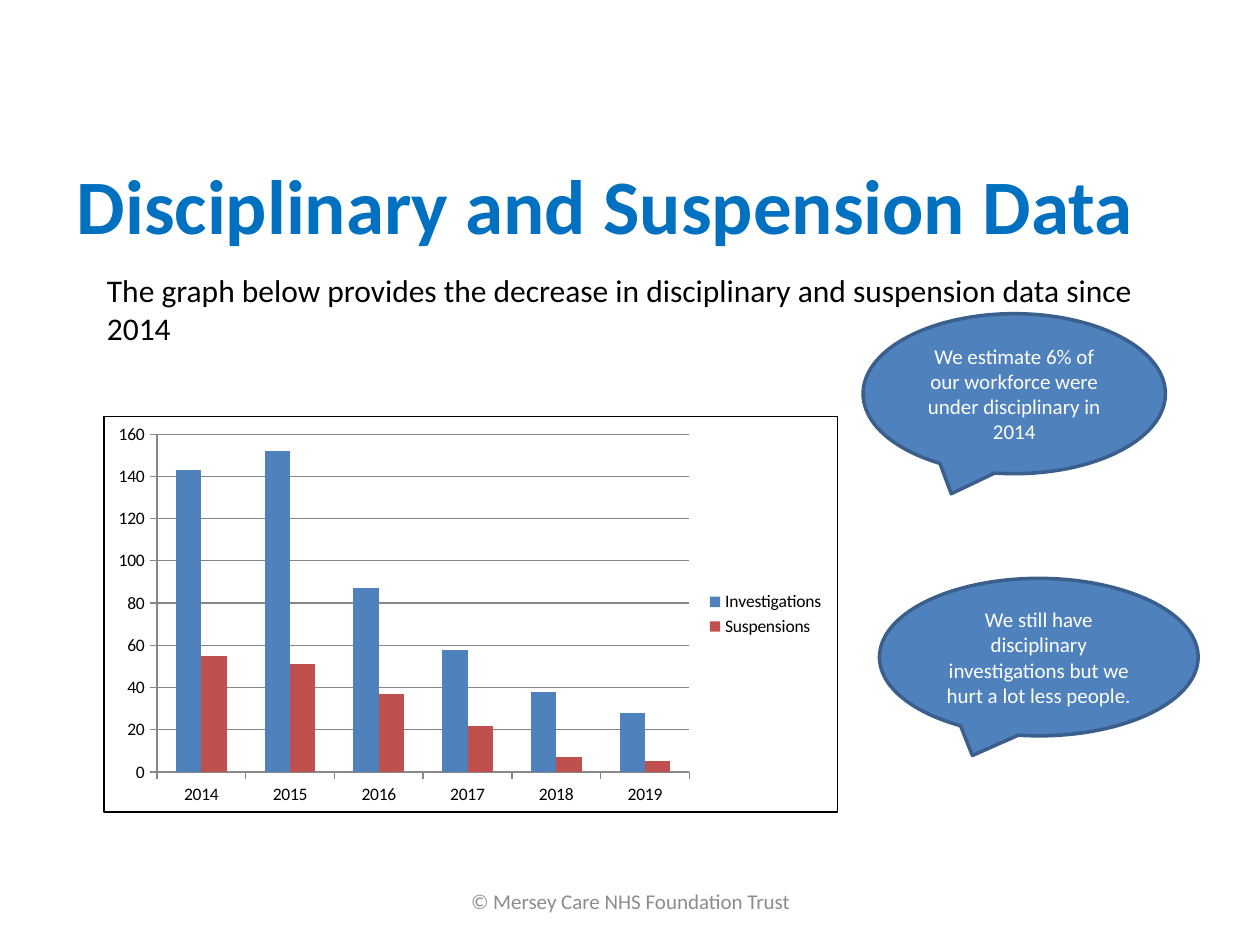
import pptx
import pptx.chart.data
import pptx.dml.color
import pptx.enum.chart
import pptx.enum.shapes
import pptx.enum.text
import pptx.oxml
import pptx.oxml.ns
import pptx.util
from pptx.util import Inches

COLORS = {
    "title": "0070C0", "ink": "000000", "footer": "8C8C8C", "white": "FFFFFF",
    "blue": "4F81BD", "red": "C0504D", "outline": "3A5F8C", "axis": "878787",
}
ALIGN = pptx.enum.text.PP_ALIGN
ANCHOR = pptx.enum.text.MSO_ANCHOR

YEARS = ["2014", "2015", "2016", "2017", "2018", "2019"]
CASES = [
    ("Investigations", [143, 152, 87, 58, 38, 28], "blue"),
    ("Suspensions", [55, 51, 37, 22, 7, 5], "red"),
]
CALLOUTS = [
    ("We estimate 6% of our workforce were under disciplinary in 2014",
     (6.85, 2.49, 2.4, 1.27)),
    ("We still have disciplinary investigations but we hurt a lot less people.",
     (6.98, 4.59, 2.53, 1.25)),
]


def rgb(color):
    return pptx.dml.color.RGBColor.from_string(COLORS[color])


def inches(box):
    return [Inches(length) for length in box]


class SlideBuilder:
    """Holds the font and the current slide."""

    def __init__(self, presentation, font="Calibri"):
        self.font = font
        self.slide = presentation.slides.add_slide(presentation.slide_layouts[5])

    def style_font(self, font, size, color, bold=False):
        values = {"name": self.font, "size": pptx.util.Pt(size), "bold": bold}
        for key, value in values.items():
            setattr(font, key, value)
        font.color.rgb = rgb(color)

    def fill_text(self, shape, text, size, color, bold=False,
                  align=ALIGN.LEFT, anchor=ANCHOR.MIDDLE):
        frame = shape.text_frame
        frame.text = text
        values = {"word_wrap": True, "vertical_anchor": anchor,
                  "auto_size": pptx.enum.text.MSO_AUTO_SIZE.NONE}
        for key, value in values.items():
            setattr(frame, key, value)
        paragraph = frame.paragraphs[0]
        paragraph.alignment = align
        self.style_font(paragraph.runs[0].font, size, color, bold)

    def title(self, text, box):
        heading = self.slide.shapes.title
        for key, value in zip(("left", "top", "width", "height"), inches(box)):
            setattr(heading, key, value)
        self.fill_text(heading, text, 44, "title", bold=True)

    def text(self, text, box, size, color, **layout):
        self.fill_text(self.slide.shapes.add_textbox(*inches(box)), text, size, color, **layout)

    def callout(self, text, box):
        bubble = self.slide.shapes.add_shape(
            pptx.enum.shapes.MSO_SHAPE.OVAL_CALLOUT, *inches(box))
        bubble.shadow.inherit = False
        bubble.fill.solid()
        bubble.fill.fore_color.rgb = rgb("blue")
        bubble.line.color.rgb = rgb("outline")
        bubble.line.width = pptx.util.Pt(2)
        self.fill_text(bubble, text, 12, "white", align=ALIGN.CENTER)

    def column_chart(self, categories, series, box):
        data = pptx.chart.data.CategoryChartData()
        data.categories = categories
        for name, values, _ in series:
            data.add_series(name, values)
        chart = self.slide.shapes.add_chart(
            pptx.enum.chart.XL_CHART_TYPE.COLUMN_CLUSTERED, *inches(box), data).chart
        chart.has_title = False
        self.style_font(chart.font, 10, "ink")

        plot = chart.plots[0]
        for key, value in {"gap_width": 150, "overlap": 0, "vary_by_categories": False}.items():
            setattr(plot, key, value)
        for columns, (_, _, color) in zip(plot.series, series):
            columns.format.fill.solid()
            columns.format.fill.fore_color.rgb = rgb(color)

        scale = {"minimum_scale": 0, "maximum_scale": 160, "major_unit": 20,
                 "has_major_gridlines": True}
        for key, value in scale.items():
            setattr(chart.value_axis, key, value)
        for axis in (chart.category_axis, chart.value_axis):
            axis.major_tick_mark = pptx.enum.chart.XL_TICK_MARK.OUTSIDE
            axis.format.line.color.rgb = rgb("axis")
        chart.value_axis.major_gridlines.format.line.color.rgb = rgb("axis")

        chart.has_legend = True
        chart.legend.position = pptx.enum.chart.XL_LEGEND_POSITION.RIGHT
        chart.legend.include_in_layout = False
        self.chart_border(chart, "ink", 0.75)

    def chart_border(self, chart, color, width):
        border = pptx.oxml.parse_xml(
            f'<c:spPr {pptx.oxml.ns.nsdecls("c", "a")}><a:noFill/>'
            f'<a:ln w="{int(pptx.util.Pt(width))}"><a:solidFill>'
            f'<a:srgbClr val="{COLORS[color]}"/></a:solidFill></a:ln></c:spPr>')
        chart._chartSpace.find(pptx.oxml.ns.qn("c:chart")).addnext(border)


def main():
    presentation = pptx.Presentation()
    presentation.slide_width = Inches(10)
    presentation.slide_height = Inches(7.5)

    builder = SlideBuilder(presentation)
    builder.title("Disciplinary and Suspension Data", (0.51, 0.99, 9, 1.25))
    builder.text("The graph below provides the decrease in disciplinary and "
                 "suspension data since 2014",
                 (0.75, 2.1, 8.35, 0.71), 18, "ink", anchor=ANCHOR.TOP)
    builder.text("© Mersey Care NHS Foundation Trust",
                 (3.42, 6.95, 3.17, 0.4), 12, "footer", align=ALIGN.CENTER)
    builder.column_chart(YEARS, CASES, (0.82, 3.3, 5.83, 3.15))
    for remark, box in CALLOUTS:
        builder.callout(remark, box)

    presentation.save("out.pptx")


if __name__ == "__main__":
    main()
